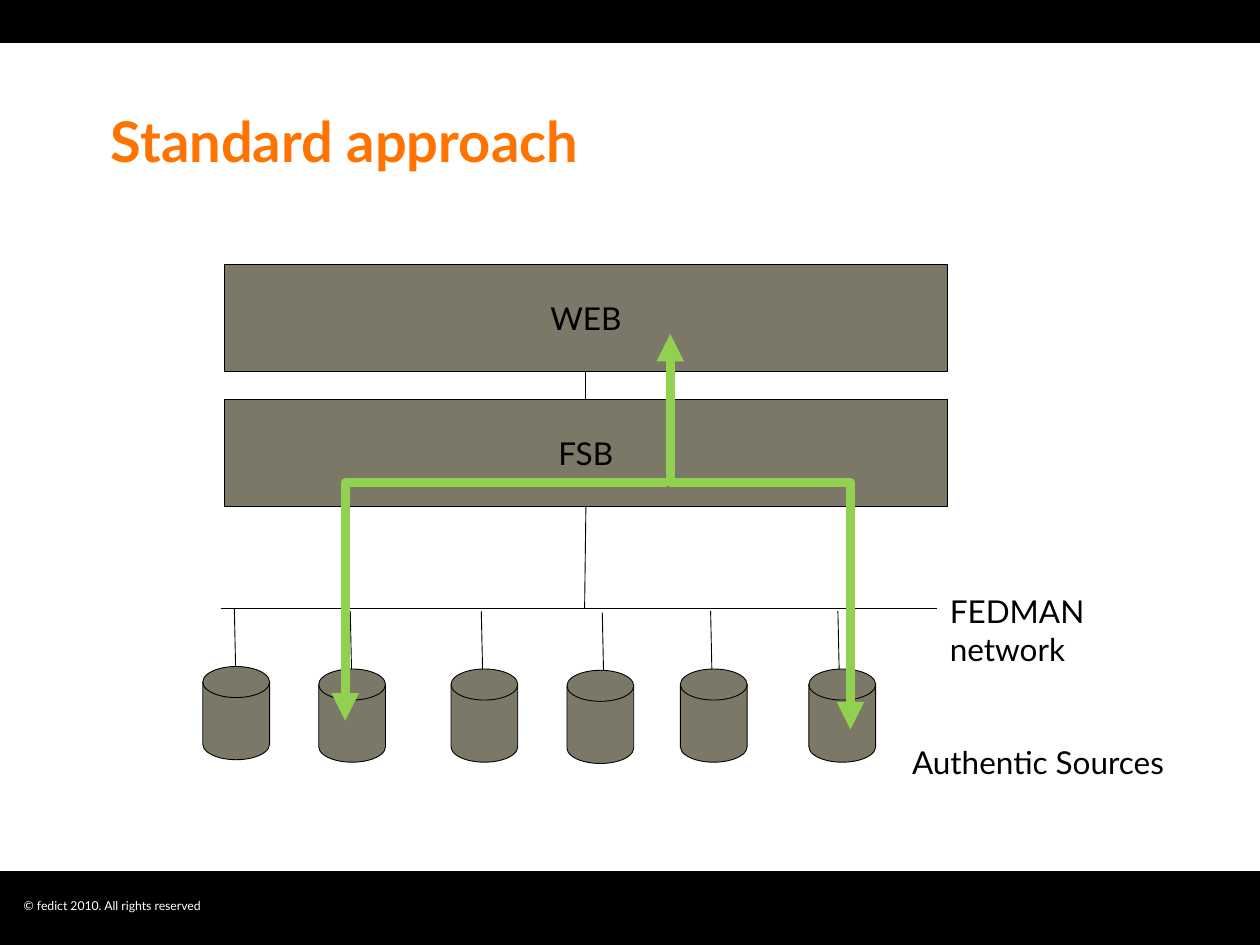
from dataclasses import dataclass

from lxml.etree import SubElement
from pptx import Presentation
from pptx.dml.color import RGBColor
from pptx.enum.shapes import MSO_CONNECTOR as Connector, MSO_SHAPE as Shape
from pptx.enum.text import MSO_ANCHOR as Anchor, PP_ALIGN as Align
from pptx.oxml.ns import qn
from pptx.util import Inches, Pt


@dataclass(frozen=True)
class Theme:
    font: str = "Lato"
    orange: str = "FF7300"
    olive: str = "7B7867"
    green: str = "92D050"
    black: str = "000000"
    white: str = "FFFFFF"
    title_size: float = 32
    label_size: float = 18
    footer_size: float = 7
    thin: float = 0.5
    band_line: float = 0.75
    flow_line: float = 5.25


THEME = Theme()
NETWORK_Y = 4.83
FLOW_Y = 3.83
DISK_WIDTH, DISK_HEIGHT = 0.53, 0.74
# left and top of each source, x where its line leaves the network
SOURCES = [
    (1.61, 5.29, 1.86), (2.53, 5.31, 2.78), (3.58, 5.31, 3.82),
    (4.5, 5.32, 4.78), (5.4, 5.31, 5.64), (6.42, 5.31, 6.65),
]


def color(value):
    return RGBColor.from_string(value)


def add_span(para, text, size, ink, bold=False):
    span = para.add_run()
    span.text = text
    span.font.name = THEME.font
    span.font.size = Pt(size)
    span.font.bold = bold
    span.font.color.rgb = color(ink)


def add_solid(page, kind, place, fill, width):
    box = page.shapes.add_shape(kind, *map(Inches, place))
    box.shadow.inherit = False
    box.fill.solid()
    box.fill.fore_color.rgb = color(fill)
    box.line.color.rgb = color(THEME.black)
    box.line.width = Pt(width)
    return box


def add_layer(page, top, name):
    box = add_solid(page, Shape.RECTANGLE, (1.78, top, 5.74, 0.85), THEME.olive, THEME.thin)
    frame = box.text_frame
    frame.vertical_anchor = Anchor.MIDDLE
    frame.margin_left = frame.margin_right = Inches(0.06)
    para = frame.paragraphs[0]
    para.alignment = Align.CENTER
    add_span(para, name, THEME.label_size, THEME.black)
    return box


def add_text(page, place, text, size, ink, bold=False, wrap=True):
    box = page.shapes.add_textbox(*map(Inches, place))
    box.text_frame.word_wrap = wrap
    add_span(box.text_frame.paragraphs[0], text, size, ink, bold)
    return box


def add_line(page, start, end, ink=THEME.black, width=THEME.thin, kind=Connector.STRAIGHT):
    line = page.shapes.add_connector(kind, *map(Inches, (*start, *end)))
    line.line.color.rgb = color(ink)
    line.line.width = Pt(width)
    SubElement(line._element.spPr, qn("a:effectLst"))
    return line


def add_flow(page, start, end, bend, arrows):
    """Green elbow arrow; bend is the share of the run before the turn."""
    line = add_line(page, start, end, THEME.green, THEME.flow_line, Connector.ELBOW)
    properties = line._element.spPr
    guides = properties.find(qn("a:prstGeom")).get_or_add_avLst()
    SubElement(guides, qn("a:gd"), name="adj1", fmla=f"val {round(bend * 100000)}")
    for arrow in arrows:
        SubElement(properties.find(qn("a:ln")), qn(f"a:{arrow}"), type="triangle")
    return line


def add_vertical_flow(page, start, end, turn_y):
    """Elbow that leaves and arrives vertically: a level one turned by 270 degrees."""
    (x1, y1), (x2, y2) = start, end
    middle_x, middle_y = (x1 + x2) / 2, (y1 + y2) / 2
    half_run, half_rise = (y2 - y1) / 2, (x2 - x1) / 2
    line = add_flow(
        page,
        (middle_x + half_run, middle_y - half_rise),
        (middle_x - half_run, middle_y + half_rise),
        (turn_y - y1) / (y2 - y1),
        ("headEnd", "tailEnd"),
    )
    line._element.spPr.find(qn("a:xfrm")).set("rot", str(270 * 60000))


def add_source(page, left, top, drop_x):
    add_solid(page, Shape.FLOWCHART_MAGNETIC_DISK,
              (left, top, DISK_WIDTH, DISK_HEIGHT), THEME.olive, THEME.thin)
    add_line(page, (drop_x, max(NETWORK_Y, top - 0.46)), (drop_x + 0.01, top))


def main():
    deck = Presentation()
    deck.slide_width, deck.slide_height = Inches(10), Inches(7.5)
    page = deck.slides.add_slide(deck.slide_layouts[6])

    for top, height in ((6.92, 0.58), (0, 0.34)):
        add_solid(page, Shape.RECTANGLE, (0, top, 10, height), THEME.black, THEME.band_line)
    title = add_text(page, (0.78, 0.33, 7.79, 1.11), "Standard approach",
                     THEME.title_size, THEME.orange, bold=True)
    title.text_frame.vertical_anchor = Anchor.BOTTOM
    title.text_frame.paragraphs[0].line_spacing = 0.95

    web = add_layer(page, 2.1, "WEB")
    bus = add_layer(page, 3.17, "FSB")
    link = add_line(page, (4.65, 2.95), (4.65, 3.17))
    link.begin_connect(web, 2)
    link.end_connect(bus, 0)
    add_line(page, (1.75, NETWORK_Y), (7.44, NETWORK_Y))
    add_line(page, (4.65, 4.02), (4.64, NETWORK_Y)).begin_connect(bus, 2)

    for source in SOURCES:
        add_source(page, *source)

    add_text(page, (7.44, 4.65, 2.11, 0.4), "FEDMAN network", THEME.label_size, THEME.black)
    add_text(page, (7.14, 5.85, 2.23, 0.4), "Authentic Sources",
             THEME.label_size, THEME.black, wrap=False)

    add_vertical_flow(page, (5.32, 2.65), (6.75, 5.79), FLOW_Y)
    add_flow(page, (5.29, FLOW_Y), (2.74, 5.72), 1, ("tailEnd",))

    add_text(page, (0.09, 7.08, 2.33, 0.27), "© fedict 2010. All rights reserved",
             THEME.footer_size, THEME.white)
    deck.save("out.pptx")


if __name__ == "__main__":
    main()
